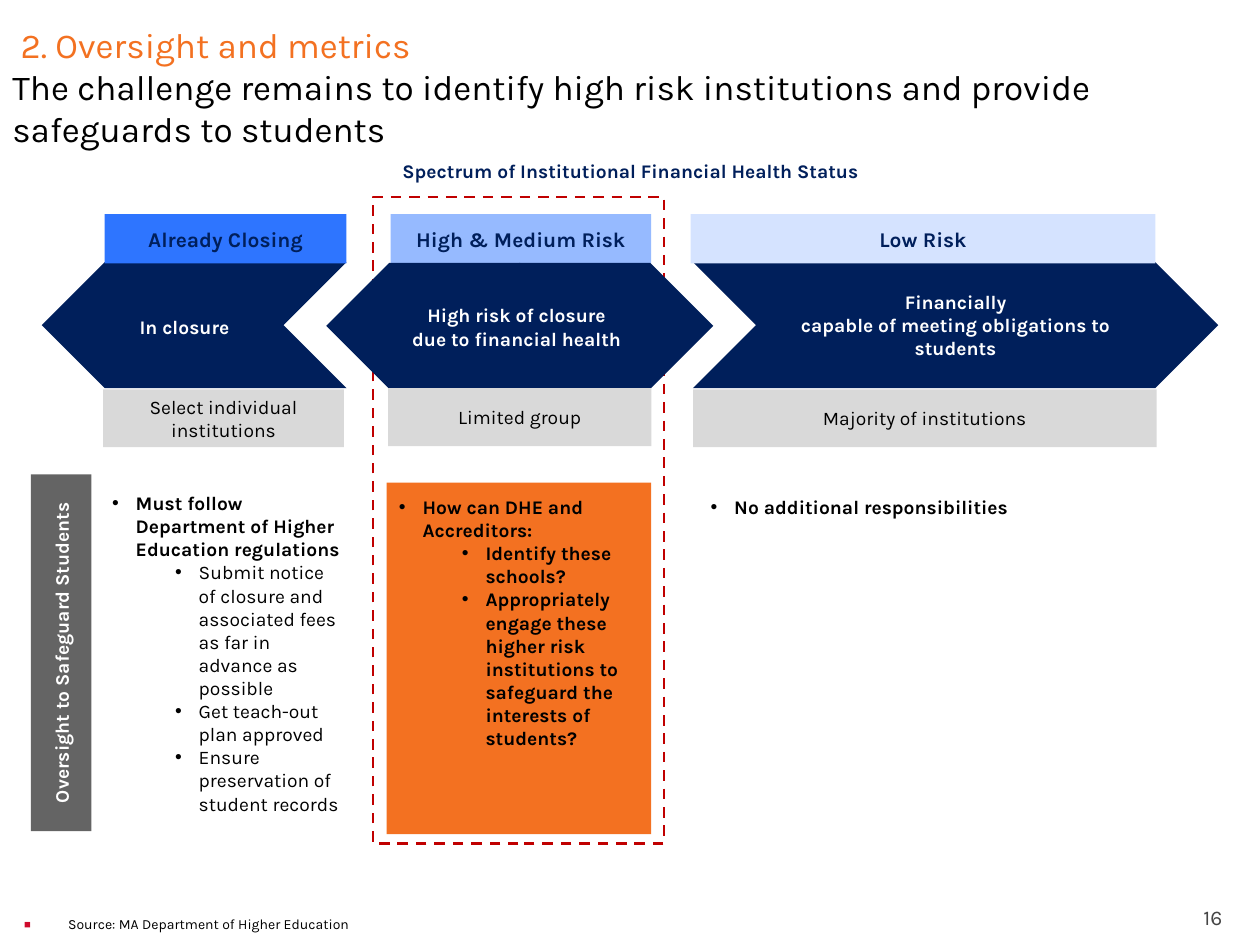
from dataclasses import dataclass

from lxml.etree import SubElement
from pptx import Presentation
from pptx.dml.color import RGBColor
from pptx.enum.dml import MSO_LINE
from pptx.enum.shapes import MSO_SHAPE as Preset
from pptx.enum.text import MSO_ANCHOR as Anchor, PP_ALIGN as Align
from pptx.oxml.ns import qn
from pptx.util import Pt


@dataclass(frozen=True)
class Theme:
    font: str = "Karla"
    title: float = 20
    label: float = 12
    body: float = 11
    source: float = 8
    white: str = "FFFFFF"
    black: str = "000000"
    navy: str = "001F5B"
    closing: str = "2E75FF"
    risk: str = "96BAFF"
    low: str = "D5E3FF"
    orange: str = "F37121"
    light_gray: str = "D9D9D9"
    dark_gray: str = "646464"
    page_gray: str = "454545"
    dash_red: str = "C00000"
    bullet_red: str = "CF0A2C"


theme = Theme()
MIDDLE_INSETS = (7.2, 3.6, 7.2, 3.6)
CAPTION_INSETS = (3.6, 0, 0, 0)

deck = Presentation()
deck.slide_width, deck.slide_height = Pt(720), Pt(540)
slide = deck.slides.add_slide(deck.slide_layouts[6])


def add_block(box, fill=None, preset=None, rotation=0):
    """Add a preset shape, or a text box when no preset is given."""
    left, top, width, height = (Pt(length) for length in box)
    if preset is None:
        return slide.shapes.add_textbox(left, top, width, height)
    block = slide.shapes.add_shape(preset, left, top, width, height)
    block.shadow.inherit = False
    block.rotation = rotation
    block.line.fill.background()
    if fill:
        block.fill.solid()
        block.fill.fore_color.rgb = RGBColor.from_string(fill)
    else:
        block.fill.background()
    return block


def write(block, lines, size=theme.body, color=theme.black, bold=False,
          align=Align.CENTER, anchor=Anchor.MIDDLE, insets=MIDDLE_INSETS, bullet=None):
    """Fill a block; each line is (text, level, bold) or plain text.

    bullet is (character, colour, size in percent, indent, hang).
    """
    frame = block.text_frame
    frame.word_wrap = True
    frame.vertical_anchor = anchor
    (frame.margin_left, frame.margin_top,
     frame.margin_right, frame.margin_bottom) = (Pt(inset) for inset in insets)
    for index, line in enumerate(lines):
        text, level, strong = (line, 0, bold) if isinstance(line, str) else line
        paragraph = frame.paragraphs[0] if index == 0 else frame.add_paragraph()
        paragraph.alignment = align
        paragraph.level = level
        if bullet:
            mark, mark_color, percent, indent, hang = bullet
            props = paragraph._p.get_or_add_pPr()
            props.set("marL", str(Pt(indent + 36 * level)))
            props.set("indent", str(-Pt(hang)))
            tint = SubElement(props, qn("a:buClr"))
            SubElement(tint, qn("a:srgbClr"), val=mark_color)
            SubElement(props, qn("a:buSzPct"), val=str(percent * 1000))
            SubElement(props, qn("a:buFont"), typeface="Arial")
            SubElement(props, qn("a:buChar"), char=mark)
        run = paragraph.add_run()
        run.text = text
        run.font.name = theme.font
        run.font.size = Pt(size)
        run.font.bold = strong
        run.font.color.rgb = RGBColor.from_string(color)


# Title, page number and source
heading = add_block((0, 0, 720, 98.6))
write(heading, [" 2. Oversight and metrics"], theme.title, theme.orange,
      align=Align.LEFT, insets=(7.2, 3.6, 3.6, 3.6))
heading_lines = heading.text_frame.paragraphs[0]
heading_lines.add_line_break()
message = heading_lines.add_run()
message.text = ("The challenge remains to identify high risk institutions "
                "and provide safeguards to students")
message.font.name = theme.font
message.font.size = Pt(theme.title)
message.font.color.rgb = RGBColor.from_string(theme.black)

write(add_block((648, 509.8, 57.6, 21.6)), ["16"], theme.label, theme.page_gray,
      align=Align.RIGHT, anchor=Anchor.BOTTOM, insets=(7.2, 3.6, 7.2, 0))
write(add_block((0, 516.2, 522, 22.3)), ["Source: MA Department of Higher Education"],
      theme.source, align=Align.LEFT, anchor=Anchor.TOP, insets=(4.3, 7.2, 7.2, 3.6),
      bullet=("■", theme.bullet_red, 80, 34.6, 25.2))

# Outer arrows of the spectrum
low_arrow = add_block((396, 149.8, 300.2, 72), theme.navy, Preset.CHEVRON)
write(low_arrow, ["Financially", "capable of meeting obligations to students"],
      color=theme.white, bold=True)
add_block((23.8, 149.8, 174.2, 72), theme.navy, Preset.CHEVRON, 180)
write(add_block((33.1, 180, 141.1, 23.8)), ["In closure"], color=theme.white, bold=True,
      anchor=Anchor.TOP, insets=CAPTION_INSETS)
write(add_block((59.8, 85.7, 601.2, 23.8), theme.white, Preset.RECTANGLE),
      ["Spectrum of Institutional Financial Health Status"], color=theme.navy, bold=True)

# Oversight duties: box, fill, insets, lines
duties = [
    ((60.5, 273.6, 136.8, 129.6), None, (3.6, 7.2, 0, 0), [
        ("Must follow Department of Higher Education regulations", 0, True),
        ("Submit notice of closure and associated fees as far in advance as possible", 1, False),
        ("Get teach-out plan approved", 1, False),
        ("Ensure preservation of student records", 1, False)]),
    ((402.5, 275.8, 256.3, 135.4), None, (3.6, 7.2, 0, 0), [
        ("No additional responsibilities", 0, True)]),
    ((220.9, 275.8, 151.2, 200.9), theme.orange, (7.2, 7.2, 7.2, 3.6), [
        ("How can DHE and Accreditors:", 0, True),
        ("Identify these schools?", 1, True),
        ("Appropriately engage these higher risk institutions to safeguard "
         "the interests of students?", 1, True)]),
]
for box, fill, insets, lines in duties:
    write(add_block(box, fill, Preset.RECTANGLE if fill else None), lines,
          align=Align.LEFT, anchor=Anchor.TOP, insets=insets,
          bullet=("•", theme.black, 100, 13.5, 13.5))

# Status headers above the arrows
for left, width, fill, status in [(59.8, 138.2, theme.closing, "Already Closing"),
                                  (223.2, 149, theme.risk, "High & Medium Risk"),
                                  (394.6, 265.7, theme.low, "Low Risk")]:
    write(add_block((left, 122.4, width, 28.1), fill, Preset.RECTANGLE), [status],
          theme.label, theme.navy, bold=True)

# Dashed focus frame, then the two-headed arrow over it
focus = add_block((213.1, 112.5, 166.3, 369.4), preset=Preset.RECTANGLE)
focus.line.color.rgb = RGBColor.from_string(theme.dash_red)
focus.line.width = Pt(1.5)
focus.line.dash_style = MSO_LINE.DASH
for left, rotation in [(296.8, 0), (186.4, 180)]:
    add_block((left, 150.2, 110.8, 72), theme.navy, Preset.PENTAGON, rotation)
write(add_block((211, 173.5, 164.9, 41.8)), ["High risk of closure", "due to financial health"],
      color=theme.white, bold=True, anchor=Anchor.TOP, insets=CAPTION_INSETS)

# Group sizes below the arrows
for left, top, width, group_size in [(59, 222.5, 137.5, "Select individual institutions"),
                                     (221.8, 221.8, 150.5, "Limited group"),
                                     (396, 222.5, 265, "Majority of institutions")]:
    write(add_block((left, top, width, 33.1), theme.light_gray, Preset.RECTANGLE), [group_size])

write(add_block((-67, 355.7, 203.8, 34.6), theme.dark_gray, Preset.RECTANGLE, 270),
      ["Oversight to Safeguard Students"], color=theme.white, bold=True)

deck.save("out.pptx")
